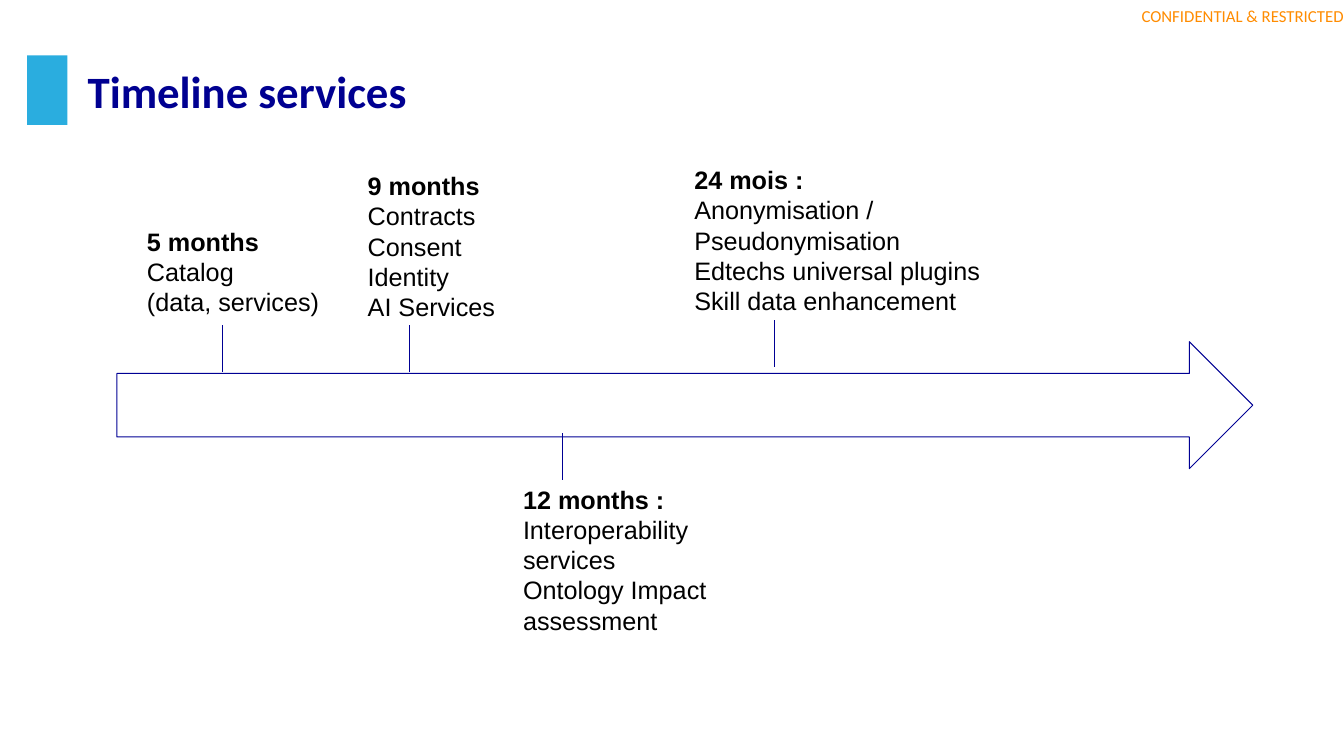
import pptx
import pptx.dml.color
import pptx.enum.shapes
import pptx.enum.text
import pptx.oxml.ns
import pptx.util
from lxml import etree

Pt = pptx.util.Pt
MSO_SHAPE = pptx.enum.shapes.MSO_SHAPE
ANCHOR = pptx.enum.text.MSO_ANCHOR
ALIGN = pptx.enum.text.PP_ALIGN
AUTO_SIZE = pptx.enum.text.MSO_AUTO_SIZE

COLOURS = {
    "title": "000091",
    "line": "000094",
    "accent": "2AADDF",
    "notice": "FF8C00",
    "text": "000000",
    "white": "FFFFFF",
}


def colour(name):
    return pptx.dml.color.RGBColor.from_string(COLOURS[name])


def write(paragraph, text, font="Arial", size=18, bold=False, ink="text", align=ALIGN.LEFT):
    """Append formatted text to a paragraph; a newline becomes a line break."""
    paragraph.alignment = align
    for index, line in enumerate(text.split("\n")):
        if index:
            paragraph.add_line_break()
        run = paragraph.add_run()
        run.text = line
        run.font.name = font
        run.font.size = Pt(size)
        run.font.bold = bold
        run.font.color.rgb = colour(ink)


presentation = pptx.Presentation()
presentation.slide_width = Pt(960)
presentation.slide_height = Pt(540)
slide = presentation.slides.add_slide(presentation.slide_layouts[5])
shapes = slide.shapes

# Header
notice = shapes.add_textbox(Pt(787.7), Pt(0), Pt(172.3), Pt(23))
frame = notice.text_frame
frame.margin_left = frame.margin_right = frame.margin_top = frame.margin_bottom = Pt(0)
frame.word_wrap = True
frame.vertical_anchor = ANCHOR.MIDDLE
write(frame.paragraphs[0], "CONFIDENTIAL & RESTRICTED", font="Calibri", size=12,
      ink="notice", align=ALIGN.RIGHT)

title = shapes.title
title.left, title.top, title.width, title.height = Pt(55.4), Pt(26), Pt(867), Pt(77)
frame = title.text_frame
frame.margin_left = frame.margin_right = frame.margin_top = frame.margin_bottom = Pt(7.2)
frame.vertical_anchor = ANCHOR.MIDDLE
write(frame.paragraphs[0], "Timeline services", font="Calibri", size=32, bold=True, ink="title")

title_block = shapes.add_shape(MSO_SHAPE.RECTANGLE, Pt(19.4), Pt(39.6), Pt(28.8), Pt(49.7))
title_block.shadow.inherit = False
title_block.fill.solid()
title_block.fill.fore_color.rgb = colour("accent")
title_block.line.fill.background()

# Timeline
arrow = shapes.add_shape(MSO_SHAPE.RIGHT_ARROW, Pt(83.5), Pt(244.1), Pt(811.4), Pt(90.7))
arrow.shadow.inherit = False
arrow.fill.solid()
arrow.fill.fore_color.rgb = colour("white")
arrow.line.color.rgb = colour("line")
arrow.line.width = Pt(0.75)

# Milestones: tick x and bottom, box (left, top, width, height), heading, services
TICK_LENGTH = 33.5
milestones = [
    (159.1, 265.7, (97.9, 154.1, 139.7, 79.9), "5 months",
     ["Catalog\n(data, services)"]),
    (292.3, 265.7, (255.6, 114.5, 146.2, 123.8), "9 months",
     ["Contracts", "Consent", "Identity", "AI Services"]),
    (401.8, 342.7, (366.5, 338.4, 186.5, 123.8), "12 months :",
     ["Interoperability\nservices", "Ontology Impact assessment"]),
    (553, 262.1, (488.9, 110.2, 226.1, 123.8), "24 mois :",
     ["Anonymisation / Pseudonymisation", "Edtechs universal plugins",
      "Skill data enhancement"]),
]

for tick_x, tick_bottom, box, heading, services in milestones:
    tick = shapes.add_connector(pptx.enum.shapes.MSO_CONNECTOR.STRAIGHT, Pt(tick_x),
                                Pt(tick_bottom), Pt(tick_x), Pt(tick_bottom - TICK_LENGTH))
    tick.line.color.rgb = colour("line")
    tick.line.width = Pt(0.75)
    etree.SubElement(tick._element.spPr, pptx.oxml.ns.qn("a:effectLst"))

    label = shapes.add_textbox(*(Pt(length) for length in box))
    frame = label.text_frame
    frame.margin_left = frame.margin_right = frame.margin_top = frame.margin_bottom = Pt(7.2)
    frame.word_wrap = True
    frame.auto_size = AUTO_SIZE.SHAPE_TO_FIT_TEXT
    write(frame.paragraphs[0], heading, bold=True)
    for service in services:
        write(frame.add_paragraph(), service)

presentation.save("out.pptx")
